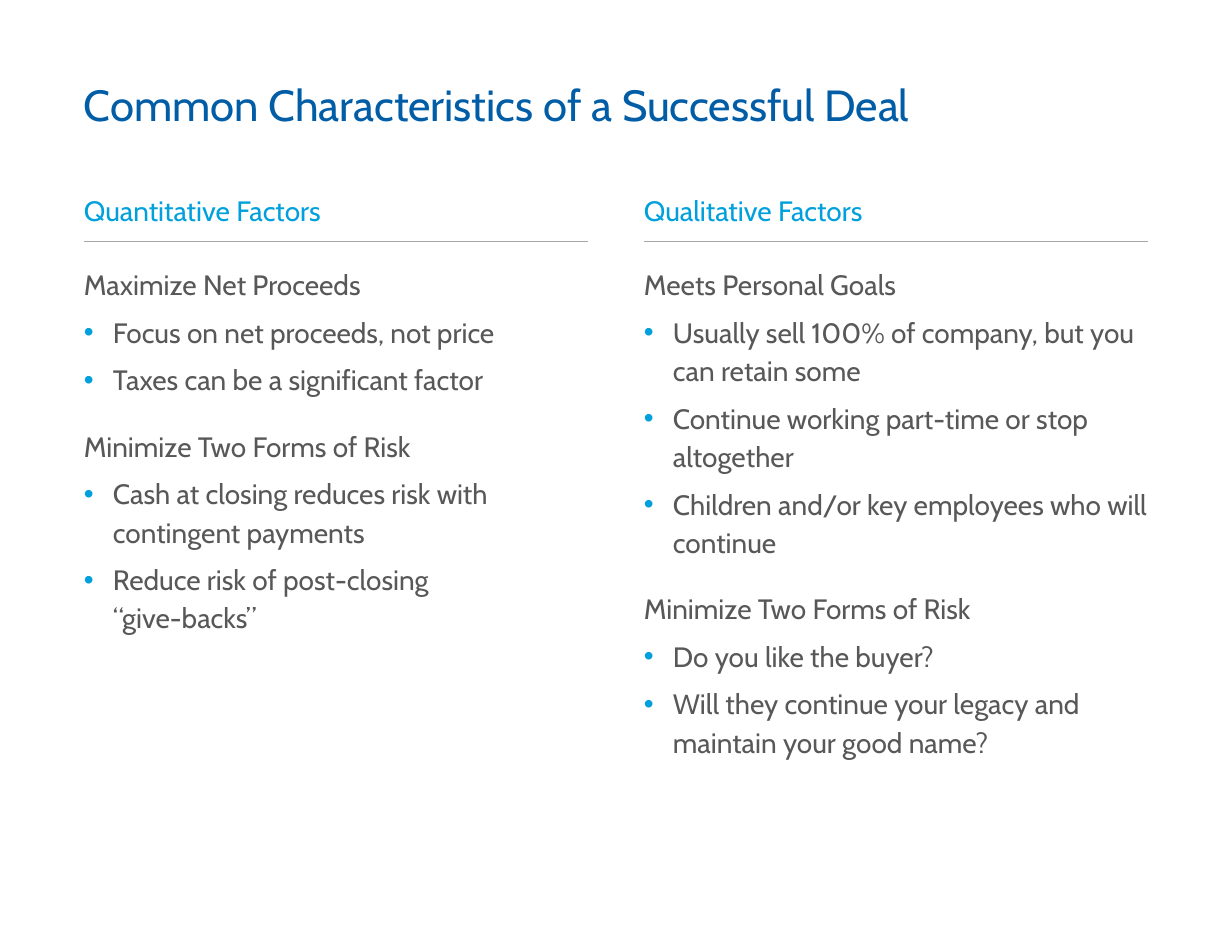
from dataclasses import dataclass

from lxml.etree import SubElement
from pptx import Presentation
from pptx.dml.color import RGBColor
from pptx.enum.shapes import MSO_CONNECTOR as Conn
from pptx.enum.text import MSO_ANCHOR as Anchor, MSO_AUTO_SIZE as Fit
from pptx.oxml.ns import qn
from pptx.slide import Slide
from pptx.util import Emu, Pt

PX = 914400 / 112
FONT = "Cabin"
COLORS = {"title": "005DA6", "accent": "00A0DD", "body": "585858", "rule": "A6A6A6"}
LEFT, WIDTH, GAP = 84, 504, 56
INDENT = 29


@dataclass
class Group:
    head: str
    points: list[str]


@dataclass
class Column:
    title: str
    height: int
    groups: list[Group]


@dataclass
class Line:
    text: str
    before: int = 0
    bullet: bool = False


COLUMNS = [
    Column("Quantitative Factors", 420, [
        Group("Maximize Net Proceeds", [
            "Focus on net proceeds, not price",
            "Taxes can be a significant factor",
        ]),
        Group("Minimize Two Forms of Risk", [
            "Cash at closing reduces risk with contingent payments",
            "Reduce risk of post-closing\n“give-backs”",
        ]),
    ]),
    Column("Qualitative Factors", 587, [
        Group("Meets Personal Goals", [
            "Usually sell 100% of company, but you can retain some",
            "Continue working part-time or stop altogether",
            "Children and/or key employees who will continue",
        ]),
        Group("Minimize Two Forms of Risk", [
            "Do you like the buyer?",
            "Will they continue your legacy and maintain your good name?",
        ]),
    ]),
]


def px(n: int) -> Emu:
    return Emu(round(n * PX))


def add_bullet(para) -> None:
    """Give the paragraph a hanging indent and an accent-coloured dot."""
    props = para._p.get_or_add_pPr()
    props.set("marL", str(px(INDENT)))
    props.set("indent", str(-px(INDENT)))
    tint = SubElement(props, qn("a:buClr"))
    SubElement(tint, qn("a:srgbClr"), val=COLORS["accent"])
    SubElement(props, qn("a:buFont"), typeface="Arial")
    SubElement(props, qn("a:buChar"), char="•")


def add_text(slide: Slide, lines: list[Line], x: int, y: int, w: int, h: int, *,
             color: str, size: int = 18, spacing: float = 0.9,
             anchor: Anchor = Anchor.TOP, fit: Fit = Fit.SHAPE_TO_FIT_TEXT) -> None:
    frame = slide.shapes.add_textbox(px(x), px(y), px(w), px(h)).text_frame
    frame.margin_left = frame.margin_right = 0
    frame.margin_top = frame.margin_bottom = 0
    frame.word_wrap = True
    frame.auto_size = fit
    frame.vertical_anchor = anchor
    for i, line in enumerate(lines):
        para = frame.add_paragraph() if i else frame.paragraphs[0]
        para.text = line.text
        para.line_spacing = spacing
        para.space_before = Pt(line.before)
        if line.bullet:
            add_bullet(para)
        for run in para.runs:
            run.font.name = FONT
            run.font.size = Pt(size)
            run.font.color.rgb = RGBColor.from_string(COLORS[color])


def add_rule(slide: Slide, x: int, y: int, w: int) -> None:
    rule = slide.shapes.add_connector(Conn.STRAIGHT, px(x), px(y), px(x + w), px(y))
    rule.line.color.rgb = RGBColor.from_string(COLORS["rule"])
    rule.line.width = Pt(0.5)
    SubElement(rule._element.spPr, qn("a:effectLst"))


def add_column(slide: Slide, col: Column, x: int) -> None:
    add_text(slide, [Line(col.title, 10)], x, 198, WIDTH, 30,
             color="accent", anchor=Anchor.BOTTOM)
    add_rule(slide, x, 241, WIDTH)
    lines = []
    for group in col.groups:
        lines.append(Line(group.head, 18 if lines else 10))
        lines += [Line(point, 6, True) for point in group.points]
    add_text(slide, lines, x, 263, WIDTH, col.height, color="body", spacing=1.14)


def main() -> None:
    deck = Presentation()
    deck.slide_width, deck.slide_height = px(1232), px(952)
    slide = deck.slides.add_slide(deck.slide_layouts[6])
    add_text(slide, [Line("Common Characteristics of a Successful Deal")],
             LEFT, 84, 2 * WIDTH + GAP, 47, color="title", size=28,
             anchor=Anchor.MIDDLE, fit=Fit.NONE)
    for i, col in enumerate(COLUMNS):
        add_column(slide, col, LEFT + i * (WIDTH + GAP))
    deck.save("out.pptx")


if __name__ == "__main__":
    main()
